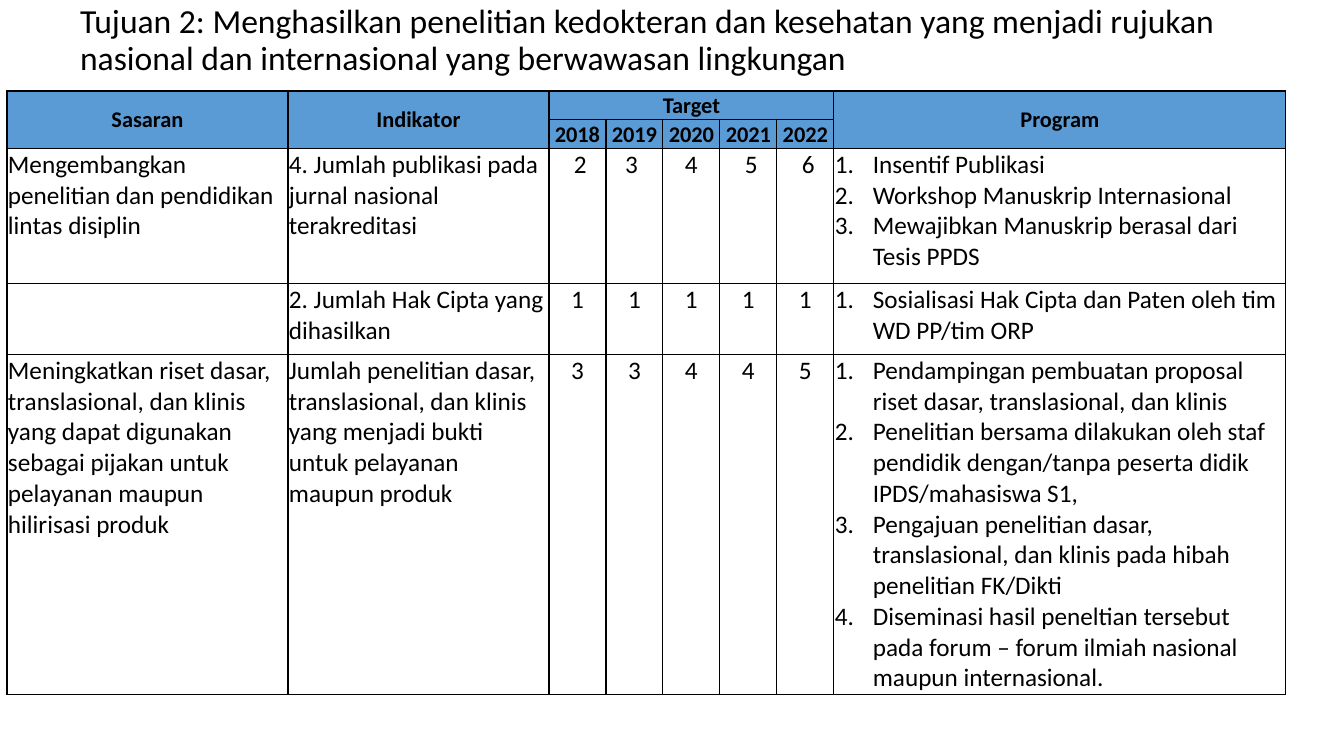
from lxml.etree import SubElement
from pptx import Presentation
from pptx.dml.color import RGBColor
from pptx.enum.text import MSO_ANCHOR as ANCHOR, MSO_AUTO_SIZE as AUTOSIZE, PP_ALIGN as ALIGN
from pptx.oxml.ns import qn
from pptx.util import Emu, Pt

FONT = "Calibri"
BLACK = "000000"
HEADER_BLUE = "5B9BD5"
TITLE = ("Tujuan 2: Menghasilkan penelitian kedokteran dan kesehatan yang menjadi rujukan "
         "nasional dan internasional yang berwawasan lingkungan")
YEARS = ["2018", "2019", "2020", "2021", "2022"]
COL_WIDTHS = [281, 261] + [57] * len(YEARS) + [452]
ROW_HEIGHTS = [28, 29, 135, 71, 340]
GOALS = [
    ("Mengembangkan penelitian dan pendidikan lintas disiplin",
     "4. Jumlah publikasi pada jurnal nasional terakreditasi",
     [" 2", "3 ", "4", " 5", " 6"],
     ["Insentif Publikasi",
      "Workshop Manuskrip Internasional",
      "Mewajibkan Manuskrip berasal dari Tesis PPDS"]),
    ("",
     "2. Jumlah Hak Cipta yang dihasilkan",
     ["1", "1", "1", "1", "1"],
     ["Sosialisasi Hak Cipta dan Paten oleh tim WD PP/tim ORP"]),
    ("Meningkatkan riset dasar, translasional, dan klinis yang dapat digunakan "
     "sebagai pijakan untuk pelayanan maupun hilirisasi produk",
     "Jumlah penelitian dasar, translasional, dan klinis yang menjadi bukti "
     "untuk pelayanan maupun produk",
     ["3", "3", "4", "4", "5"],
     ["Pendampingan pembuatan proposal riset dasar, translasional, dan klinis",
      "Penelitian bersama dilakukan oleh staf pendidik dengan/tanpa peserta didik "
      "IPDS/mahasiswa S1,",
      "Pengajuan penelitian dasar, translasional, dan klinis pada hibah penelitian FK/Dikti",
      "Diseminasi hasil peneltian tersebut pada forum – forum ilmiah nasional "
      "maupun internasional."]),
]


def px(n):
    return Emu(round(n * 914400 / 100.8))


def rgb(value):
    return RGBColor.from_string(value)


def style_runs(p, size, bold=False):
    for r in p.runs:
        r.font.name = FONT
        r.font.size = Pt(size)
        r.font.bold = bold
        r.font.color.rgb = rgb(BLACK)


def add_title(s, text, x, y, w, h):
    sp = s.shapes.title
    sp.left, sp.top, sp.width, sp.height = px(x), px(y), px(w), px(h)
    tf = sp.text_frame
    tf.text = text
    tf.word_wrap = True
    tf.auto_size = AUTOSIZE.NONE
    tf.vertical_anchor = ANCHOR.MIDDLE
    p = tf.paragraphs[0]
    p.alignment = ALIGN.LEFT
    p.line_spacing = 0.9
    style_runs(p, 24)


def number_paragraph(p):
    pPr = p._p.get_or_add_pPr()
    pPr.set("marL", str(px(38)))
    pPr.set("indent", str(-px(38)))
    SubElement(pPr, qn("a:buFont"), typeface="+mj-lt")
    SubElement(pPr, qn("a:buAutoNum"), type="arabicPeriod")


def add_borders(cell):
    tcPr = cell._tc.get_or_add_tcPr()
    for i, side in enumerate(("lnL", "lnR", "lnT", "lnB")):
        ln = tcPr.makeelement(qn(f"a:{side}"), {"w": str(Pt(1))})
        fill = SubElement(ln, qn("a:solidFill"))
        SubElement(fill, qn("a:srgbClr"), val=BLACK)
        tcPr.insert(i, ln)


def format_cell(cell):
    cell.margin_left = cell.margin_right = cell.margin_top = px(1)
    cell.margin_bottom = 0
    cell.fill.background()
    add_borders(cell)


def fill_header(cell, text):
    cell.text_frame.text = text
    cell.vertical_anchor = ANCHOR.MIDDLE
    cell.fill.solid()
    cell.fill.fore_color.rgb = rgb(HEADER_BLUE)
    p = cell.text_frame.paragraphs[0]
    p.alignment = ALIGN.CENTER
    style_runs(p, 16, bold=True)


def fill_body(cell, lines, align=ALIGN.LEFT, numbered=False):
    cell.text_frame.text = "\n".join(lines)
    cell.vertical_anchor = ANCHOR.TOP
    for p in cell.text_frame.paragraphs:
        p.alignment = align
        if numbered:
            number_paragraph(p)
        style_runs(p, 18)


def add_goal_table(s, x, y):
    frame = s.shapes.add_table(len(ROW_HEIGHTS), len(COL_WIDTHS), px(x), px(y),
                               px(sum(COL_WIDTHS)), px(sum(ROW_HEIGHTS)))
    table = frame.table
    table.first_row = table.horz_banding = False
    for col, width in zip(table.columns, COL_WIDTHS):
        col.width = px(width)
    for row, height in zip(table.rows, ROW_HEIGHTS):
        row.height = px(height)
    for cell in table.iter_cells():
        format_cell(cell)

    last = len(COL_WIDTHS) - 1
    for col, label in ((0, "Sasaran"), (1, "Indikator"), (last, "Program")):
        table.cell(0, col).merge(table.cell(1, col))
        fill_header(table.cell(0, col), label)
    table.cell(0, 2).merge(table.cell(0, last - 1))
    fill_header(table.cell(0, 2), "Target")
    for col, year in enumerate(YEARS, 2):
        fill_header(table.cell(1, col), year)

    for row, (goal, indicator, targets, programs) in enumerate(GOALS, 2):
        fill_body(table.cell(row, 0), [goal])
        fill_body(table.cell(row, 1), [indicator])
        for col, target in enumerate(targets, 2):
            fill_body(table.cell(row, col), [target], ALIGN.CENTER)
        fill_body(table.cell(row, last), programs, numbered=True)


def main():
    prs = Presentation()
    prs.slide_width, prs.slide_height = px(1344), px(756)
    s = prs.slides.add_slide(prs.slide_layouts[5])
    add_title(s, TITLE, 70, 5, 1159, 72)
    add_goal_table(s, 7, 91)
    prs.save("out.pptx")


if __name__ == "__main__":
    main()
